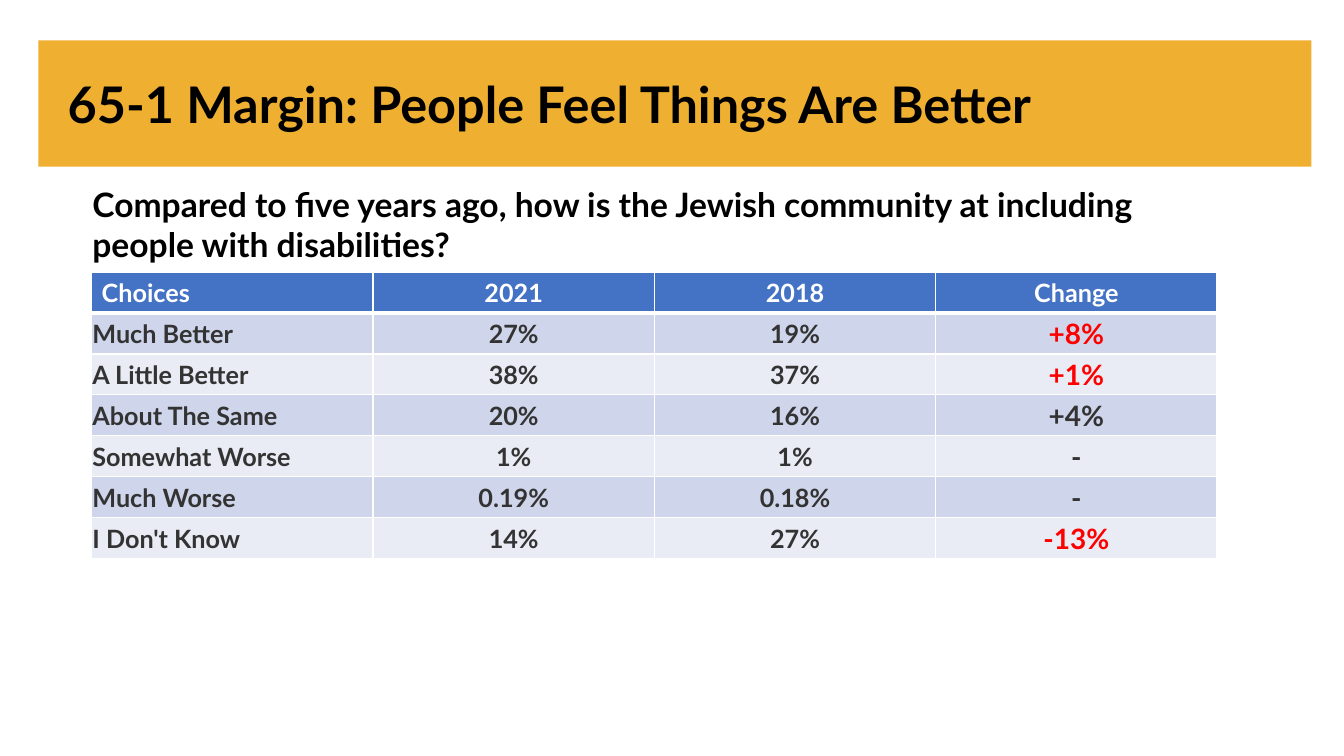
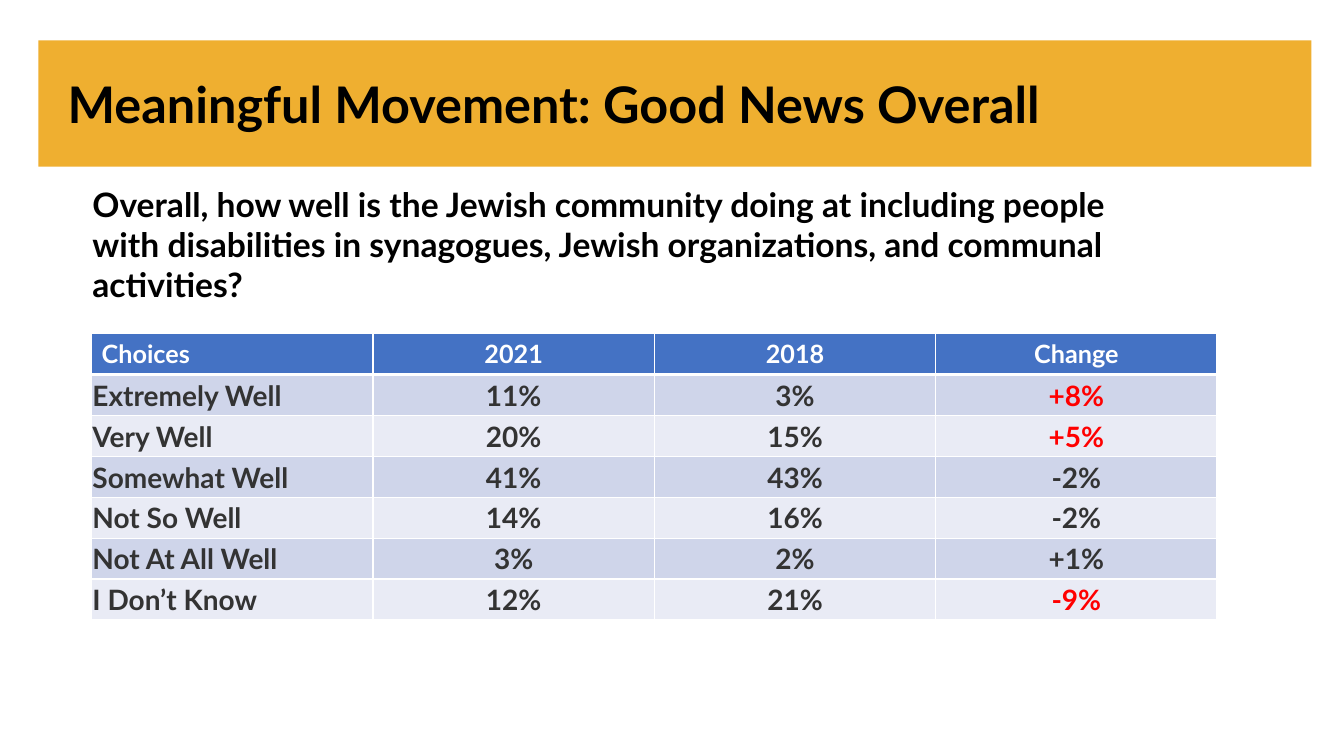
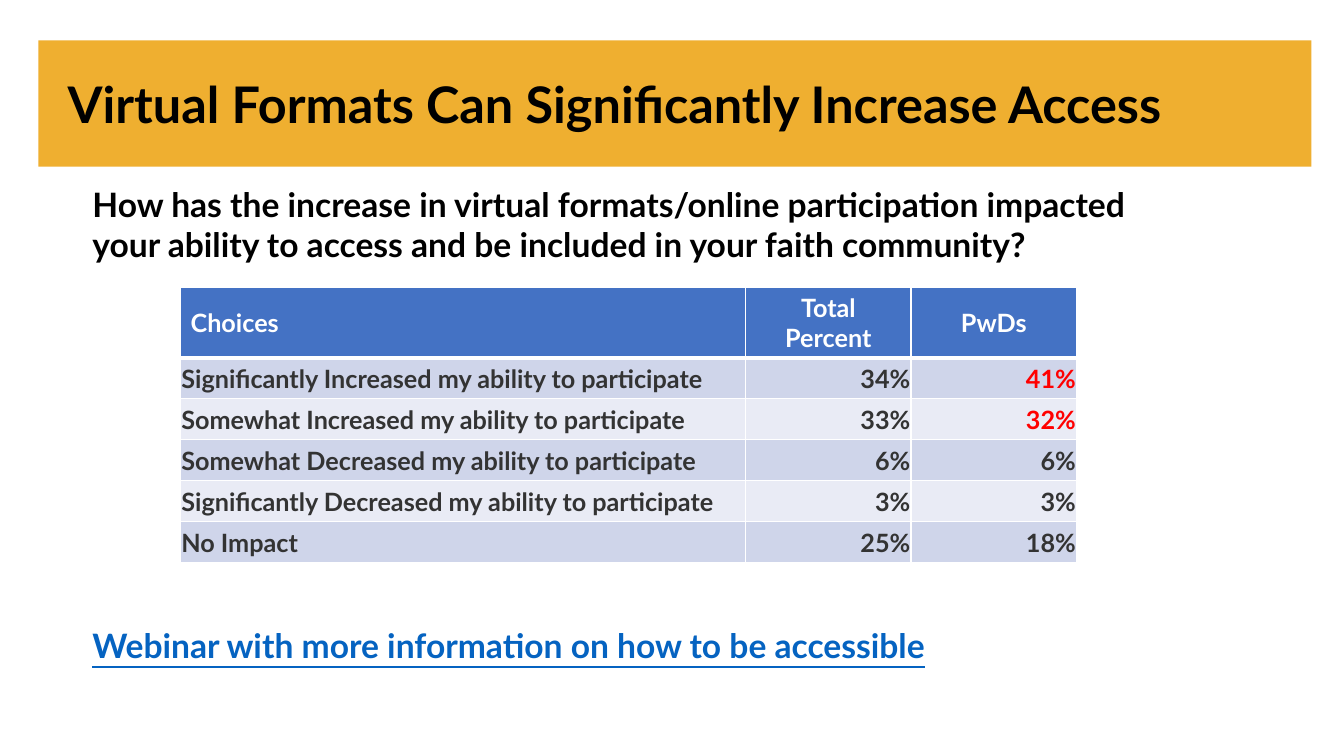
from lxml.etree import SubElement as Sub
from pptx import Presentation
from pptx.dml.color import RGBColor as Rgb
from pptx.enum.shapes import MSO_SHAPE as Shape
from pptx.enum.text import MSO_ANCHOR as Anchor, MSO_AUTO_SIZE as Auto, PP_ALIGN as Align
from pptx.oxml.ns import qn
from pptx.util import Cm, Pt

HUES = {
    "band": "EFAF30", "ink": "000000", "white": "FFFFFF", "head": "4472C4",
    "odd": "CFD5EA", "even": "E9EBF5", "gray": "333333", "red": "FF0000",
    "link": "0563C1",
}
FACE = "Lato"
BAND = (0.97, 1.02, 32.08, 3.18)
ROW = 1.03


def hue(name):
    return Rgb.from_string(HUES[name])


def style(para, size, color, align=Align.LEFT):
    para.alignment = align
    font = para.font
    font.name, font.size, font.bold = FACE, Pt(size), True
    font.color.rgb = hue(color)


def add_band(slide, layout):
    band = slide.shapes.add_shape(Shape.RECTANGLE, *map(Cm, BAND))
    band.shadow.inherit = False
    band.fill.solid()
    band.fill.fore_color.rgb = hue("band")
    band.line.fill.background()
    layout.placeholders[0].element.addprevious(band.element)


def add_title(slide, text):
    left, top, _, height = BAND
    title = slide.shapes.title
    title.left, title.top = Cm(left + 0.48), Cm(top)
    title.width, title.height = Cm(29.4), Cm(height)
    frame = title.text_frame
    frame.text = text
    frame.auto_size = Auto.NONE
    frame.vertical_anchor = Anchor.MIDDLE
    style(frame.paragraphs[0], 36, "ink")


def add_text(slide, text, box, color="ink"):
    frame = slide.shapes.add_textbox(*map(Cm, box)).text_frame
    frame.word_wrap = True
    frame.text = text
    para = frame.paragraphs[0]
    style(para, 24, color)
    return para


def edge(cell, row):
    props = cell._tc.get_or_add_tcPr()
    wide = {"lnT": row == 1, "lnB": row == 0}
    for spot, side in enumerate(("lnL", "lnR", "lnT", "lnB")):
        line = Sub(props, qn("a:" + side), w=str(Pt(3 if wide.get(side) else 1)))
        fill = Sub(line, qn("a:solidFill"))
        Sub(fill, qn("a:srgbClr"), val=HUES["white"])
        props.insert(spot, line)


def add_grid(slide, spot, widths, rows, reds, size=18, last=18, align=Align.CENTER):
    box = (*spot, sum(widths), ROW * len(rows))
    grid = slide.shapes.add_table(len(rows), len(widths), *map(Cm, box)).table
    for col, width in zip(grid.columns, widths):
        col.width = Cm(width)
    for r, row in enumerate(rows):
        grid.rows[r].height = Cm(ROW)
        for c, text in enumerate(row):
            cell = grid.cell(r, c)
            cell.text = text
            cell.vertical_anchor = Anchor.MIDDLE
            cell.fill.solid()
            shade = "odd" if r % 2 else "even"
            cell.fill.fore_color.rgb = hue(shade if r else "head")
            edge(cell, r)
            end = c == len(row) - 1
            para = cell.text_frame.paragraphs[0]
            if r:
                cell.margin_left = cell.margin_right = cell.margin_top = Cm(0.02)
                cell.margin_bottom = 0
                color = "red" if end and r in reds else "gray"
                style(para, last if end else size, color, align if c else Align.LEFT)
            else:
                style(para, 18, "white", Align.CENTER if c else Align.LEFT)


def add_page(deck, title, ask, **grid):
    slide = deck.slides.add_slide(deck.slide_layouts[5])
    add_title(slide, title)
    add_text(slide, ask, (2.08, 4.5, 27.53, 2.31))
    add_grid(slide, **grid)
    return slide


def main():
    deck = Presentation()
    deck.slide_width, deck.slide_height = Cm(33.87), Cm(19.05)
    years = ("Choices", "2021", "2018", "Change")
    first = add_page(
        deck, "65-1 Margin: People Feel Things Are Better",
        "Compared to five years ago, how is the Jewish community at including "
        "people with disabilities?",
        spot=(2.31, 6.86), widths=[7.09] * 4, reds={1, 2, 6}, last=20,
        rows=[
            years,
            ("Much Better", "27%", "19%", "+8%"),
            ("A Little Better", "38%", "37%", "+1%"),
            ("About The Same", "20%", "16%", "+4%"),
            ("Somewhat Worse", "1%", "1%", "-"),
            ("Much Worse", "0.19%", "0.18%", "-"),
            ("I Don't Know", "14%", "27%", "-13%"),
        ])
    add_band(first, deck.slide_layouts[5])
    add_page(
        deck, "Meaningful Movement: Good News Overall",
        "Overall, how well is the Jewish community doing at including people "
        "with disabilities in synagogues, Jewish organizations, and communal "
        "activities?",
        spot=(2.31, 8.41), widths=[7.09] * 4, reds={1, 2, 6}, size=20, last=20,
        rows=[
            years,
            ("Extremely Well", "11%", "3%", "+8%"),
            ("Very Well", "20%", "15%", "+5%"),
            ("Somewhat Well", "41%", "43%", "-2%"),
            ("Not So Well", "14%", "16%", "-2%"),
            ("Not At All Well", "3%", "2%", "+1%"),
            ("I Don’t Know", "12%", "21%", "-9%"),
        ])
    final = add_page(
        deck, "Virtual Formats Can Significantly Increase Access",
        "How has the increase in virtual formats/online participation impacted "
        "your ability to access and be included in your faith community?",
        spot=(4.55, 7.24), widths=[14.24, 4.17, 4.17], reds={1, 2},
        align=Align.RIGHT,
        rows=[
            ("Choices", "Total Percent", "PwDs"),
            ("Significantly Increased my ability to participate", "34%", "41%"),
            ("Somewhat Increased my ability to participate", "33%", "32%"),
            ("Somewhat Decreased my ability to participate", "6%", "6%"),
            ("Significantly Decreased my ability to participate", "3%", "3%"),
            ("No Impact", "25%", "18%"),
        ])
    link = add_text(
        final, "Webinar with more information on how to be accessible",
        (2.08, 15.62, 23.32, 1.27), "link")
    link.font.underline = True
    deck.save("out.pptx")


if __name__ == "__main__":
    main()
